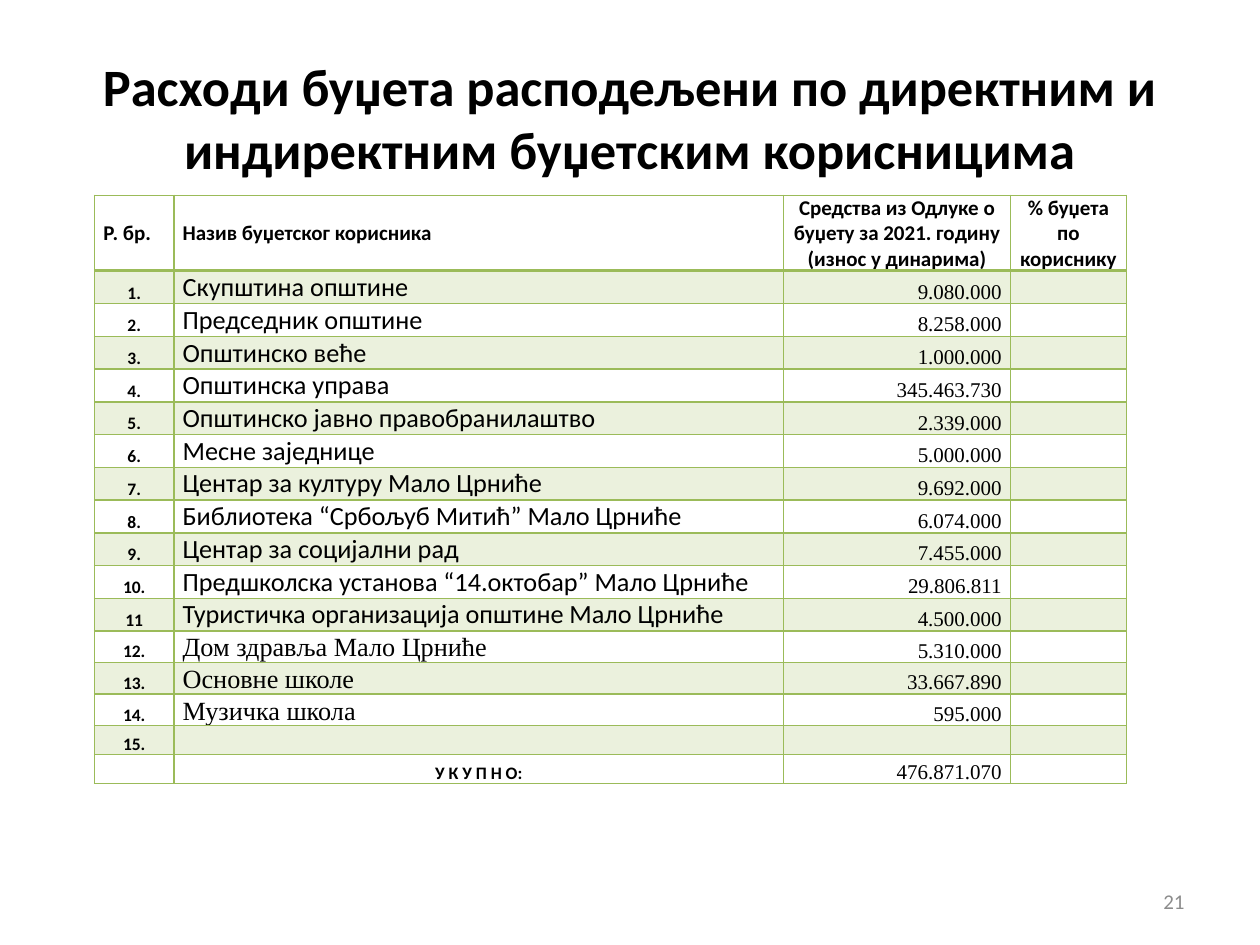
import pptx
import pptx.dml.color
import pptx.enum.text
import pptx.oxml.ns
import pptx.util
from lxml import etree

Inches, Pt = pptx.util.Inches, pptx.util.Pt
RGBColor = pptx.dml.color.RGBColor
ALIGN = pptx.enum.text.PP_ALIGN
ANCHOR = pptx.enum.text.MSO_ANCHOR
qn = pptx.oxml.ns.qn

BLACK = RGBColor(0x00, 0x00, 0x00)
GREY = RGBColor(0x8C, 0x8C, 0x8C)
GREEN = RGBColor(0x9B, 0xBB, 0x59)
SANS, SERIF = "Calibri", "Times New Roman"

# Content
TITLE = "Расходи буџета расподељени по директним и индиректним буџетским корисницима"
PAGE_NUMBER = "21"
HEADINGS = (
    "Р. бр.",
    "Назив буџетског корисника",
    "Средства из Одлуке о буџету за 2021. годину (износ у динарима)",
    "% буџета по кориснику",
)
USERS = [
    ("1.", "Скупштина општине", "9.080.000"),
    ("2.", "Председник општине", "8.258.000"),
    ("3.", "Општинско веће", "1.000.000"),
    ("4.", "Општинска управа", "345.463.730"),
    ("5.", "Општинско јавно правобранилаштво", "2.339.000"),
    ("6.", "Месне заједнице", "5.000.000"),
    ("7.", "Центар за културу Мало Црниће", "9.692.000"),
    ("8.", "Библиотека “Србољуб Митић” Мало Црниће", "6.074.000"),
    ("9.", "Центар за социјални рад", "7.455.000"),
    ("10.", "Предшколска установа “14.октобар” Мало Црниће", "29.806.811"),
    ("11", "Туристичка организација општине Мало Црниће", "4.500.000"),
    ("12.", "Дом здравља Мало Црниће", "5.310.000"),
    ("13.", "Основне школе", "33.667.890"),
    ("14.", "Музичка школа", "595.000"),
    ("15.", "", ""),
]
TOTAL = ("", "У К У П Н О:", "476.871.070")
FIRST_SERIF_ROW = 12
COLUMN_WIDTHS = (0.63, 4.84, 1.8, 0.92)
HEADER_HEIGHT, TALL_ROW, SHORT_ROW = 0.6, 0.26, 0.23

# Text formats
HEADING = {"size": Pt(12), "name": SANS, "bold": True}
NUMBER = {"size": Pt(10), "name": SANS, "bold": True}
USER = {"size": Pt(15), "name": SANS, "bold": False}
SERIF_USER = {**USER, "name": SERIF}
AMOUNT = {"size": Pt(12), "name": SERIF, "bold": False}


def write(frame, text, align, style, color=BLACK):
    paragraph = frame.paragraphs[0]
    paragraph.alignment = align
    if not text:
        # Keeps an empty cell from growing its row
        etree.SubElement(paragraph._p, qn("a:endParaRPr"), sz="1000")
        return
    run = paragraph.add_run()
    run.text = text
    for key, value in style.items():
        setattr(run.font, key, value)
    run.font.color.rgb = color


def add_text(slide, box, text, align, style, color=BLACK):
    frame = slide.shapes.add_textbox(*map(Inches, box)).text_frame
    frame.word_wrap = True
    frame.vertical_anchor = ANCHOR.MIDDLE
    write(frame, text, align, style, color)


def format_cell(cell, anchor, widths, banded):
    margins = {"margin_left": 0.07, "margin_right": 0.07,
               "margin_top": 0, "margin_bottom": 0}
    for key, value in margins.items():
        setattr(cell, key, Inches(value))
    cell.vertical_anchor = anchor

    properties = cell._tc.get_or_add_tcPr()
    for side, points in widths.items():
        line = etree.SubElement(properties, qn(f"a:ln{side}"), w=str(Pt(points)))
        fill = etree.SubElement(line, qn("a:solidFill"))
        etree.SubElement(fill, qn("a:srgbClr"), val=str(GREEN))

    if banded:
        cell.fill.solid()
        cell.fill.fore_color.rgb = GREEN
        tint = properties.find(qn("a:solidFill")).find(qn("a:srgbClr"))
        etree.SubElement(tint, qn("a:alpha"), val="20000")
    else:
        cell.fill.background()


def add_budget_table(slide):
    rows = [HEADINGS] + [row + ("",) for row in USERS + [TOTAL]]
    last = len(rows) - 1
    heights = [HEADER_HEIGHT] + [
        TALL_ROW if r < FIRST_SERIF_ROW else SHORT_ROW for r in range(1, len(rows))]
    table = slide.shapes.add_table(
        len(rows), len(HEADINGS), Inches(0.75), Inches(1.55),
        Inches(sum(COLUMN_WIDTHS)), Inches(sum(heights))).table
    table.first_row = table.horz_banding = False
    for column, width in zip(table.columns, COLUMN_WIDTHS):
        column.width = Inches(width)
    for row, height in zip(table.rows, heights):
        row.height = Inches(height)

    header_aligns = (ALIGN.LEFT, ALIGN.LEFT, ALIGN.CENTER, ALIGN.CENTER)
    for r, texts in enumerate(rows):
        if r == 0:
            aligns, styles = header_aligns, (HEADING,) * 4
        elif r == last:
            aligns = (ALIGN.CENTER, ALIGN.CENTER, ALIGN.RIGHT, ALIGN.RIGHT)
            styles = (NUMBER, NUMBER, AMOUNT, AMOUNT)
        else:
            aligns = (ALIGN.CENTER, ALIGN.LEFT, ALIGN.RIGHT, ALIGN.RIGHT)
            user = USER if r < FIRST_SERIF_ROW else SERIF_USER
            styles = (NUMBER, user, AMOUNT, AMOUNT)
        widths = {"L": 1, "R": 1, "T": 2 if r == 1 else 1, "B": 2 if r == 0 else 1}
        anchor = ANCHOR.MIDDLE if r == 0 else ANCHOR.BOTTOM
        for c, (text, align, style) in enumerate(zip(texts, aligns, styles)):
            cell = table.cell(r, c)
            format_cell(cell, anchor, widths, banded=r % 2 == 1)
            write(cell.text_frame, text, align, style)


def main():
    deck = pptx.Presentation()
    deck.slide_width, deck.slide_height = Inches(10), Inches(7.5)
    slide = deck.slides.add_slide(deck.slide_layouts[6])

    # Title, table and page number
    add_text(slide, (0.5, 0.3, 9, 1.25), TITLE, ALIGN.CENTER,
             {"size": Pt(30), "name": SANS, "bold": True})
    add_budget_table(slide)
    add_text(slide, (7.17, 6.95, 2.33, 0.4), PAGE_NUMBER, ALIGN.RIGHT,
             {"size": Pt(12), "name": SANS}, GREY)
    deck.save("out.pptx")


if __name__ == "__main__":
    main()
